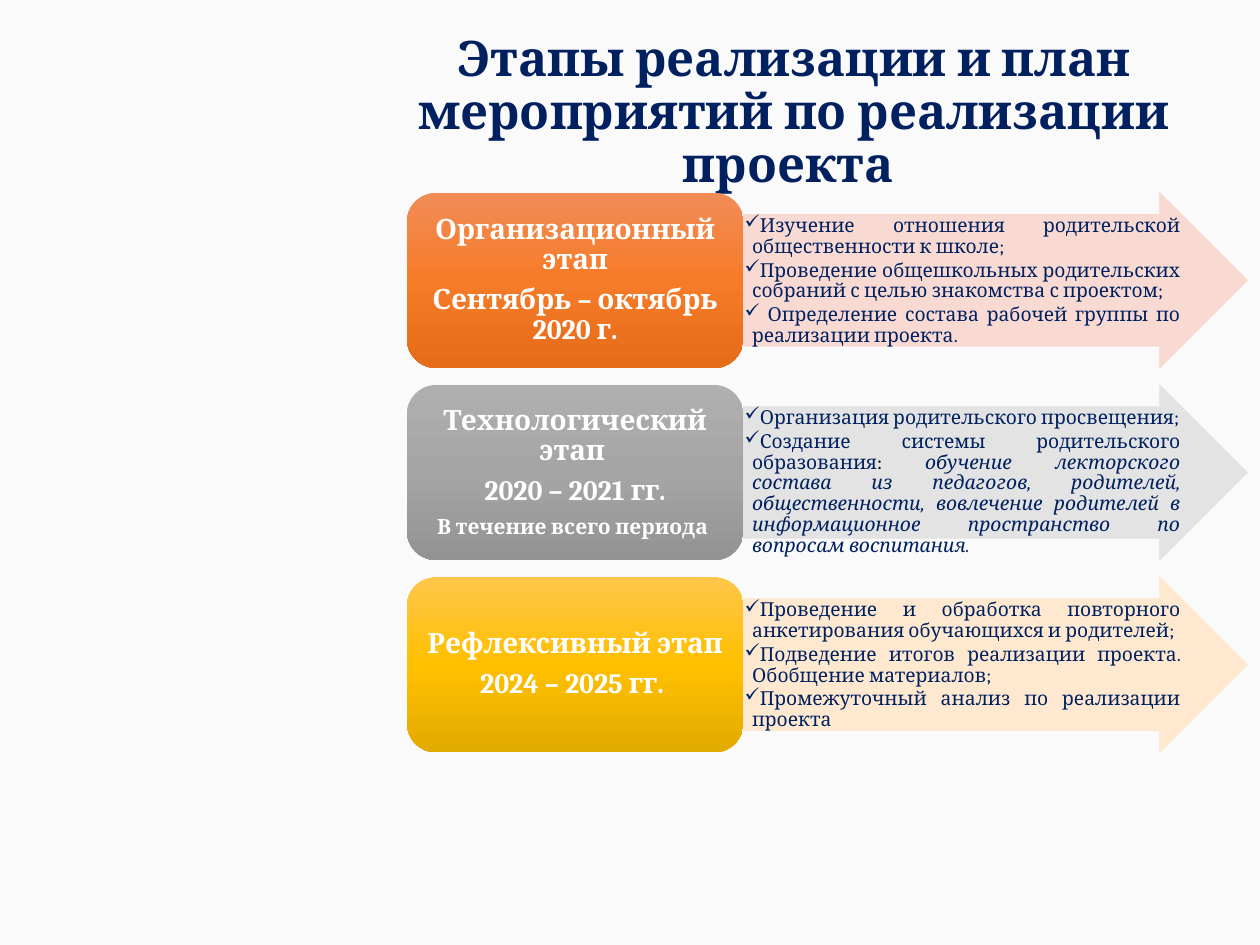
from lxml import etree
from copy import deepcopy
from pptx import Presentation
from pptx.dml.color import RGBColor
from pptx.enum.shapes import MSO_SHAPE
from pptx.enum.text import MSO_ANCHOR, PP_ALIGN
from pptx.oxml.ns import qn
from pptx.util import Inches, Pt

ROUNDED = MSO_SHAPE.ROUNDED_RECTANGLE
ARROW = MSO_SHAPE.RIGHT_ARROW
MIDDLE = MSO_ANCHOR.MIDDLE
TOP = MSO_ANCHOR.TOP
CENTER = PP_ALIGN.CENTER
JUSTIFY = PP_ALIGN.JUSTIFY

SERIF = "Cambria"
SANS = "Calibri"
NAVY = "002060"
WHITE = "FFFFFF"
BLACK = "000000"

LABEL_WIDTH = 2.67
ROW_HEIGHT = 1.39
ROW_STEP = 1.525

STAGES = [
    {
        "gradient": ["F18C57", "F67B28", "E56C19"],
        "tint": "F8D7CE",
        "label": [("Организационный этап", 16), ("Сентябрь – октябрь 2020 г.", 16)],
        "tasks": [
            [("Изучение отношения родительской общественности к школе;", {})],
            [("Проведение общешкольных родительских собраний с целью знакомства с проектом;", {})],
            [(" Определение состава рабочей группы по реализации проекта.", {})],
        ],
    },
    {
        "gradient": ["AFAFAF", "A5A5A5", "939393"],
        "tint": "E1E1E1",
        "label": [("Технологический этап ", 16), ("2020 – 2021 гг.", 16),
                  ("В течение всего периода ", 12)],
        "tasks": [
            [("Организация родительского просвещения;", {})],
            [("Создание системы родительского образования", {}),
             (": ", {"name": SANS, "color": BLACK}),
             ("обучение лекторского состава из педагогов, родителей, общественности, "
              "вовлечение родителей в информационное пространство по вопросам воспитания.",
              {"italic": True})],
        ],
    },
    {
        "gradient": ["FFC64B", "FFC000", "E3AB00"],
        "tint": "FFE8CC",
        "label": [("Рефлексивный этап", 16), ("2024 – 2025 гг. ", 16)],
        "tasks": [
            [("Проведение и обработка повторного анкетирования обучающихся и родителей;", {})],
            [("Подведение итогов реализации проекта. Обобщение материалов;", {})],
            [("Промежуточный анализ по реализации проекта", {})],
        ],
    },
]


def rgb(value):
    return RGBColor.from_string(value)


def prepare_frame(shape, anchor, horizontal, vertical):
    frame = shape.text_frame
    frame.word_wrap = True
    frame.vertical_anchor = anchor
    frame.margin_left = frame.margin_right = Inches(horizontal)
    frame.margin_top = frame.margin_bottom = Inches(vertical)
    return frame


def add_para(frame, index, align, space_after=0):
    para = frame.paragraphs[0] if index == 0 else frame.add_paragraph()
    para.alignment = align
    para.line_spacing = 0.9
    para.space_after = Pt(space_after)
    return para


def add_span(para, text, size, color=NAVY, name=SERIF, bold=False, italic=False):
    span = para.add_run()
    span.text = text
    span.font.size = Pt(size)
    span.font.name = name
    span.font.bold = bold
    span.font.italic = italic
    span.font.color.rgb = rgb(color)


def add_check_bullet(para):
    properties = para._p.get_or_add_pPr()
    properties.set("marL", str(Inches(0.06)))
    properties.set("indent", str(-Inches(0.06)))
    etree.SubElement(properties, qn("a:buChar")).set("char", "✓")


def set_gradient(shape, colors):
    shape.fill.gradient()
    shape.fill.gradient_angle = 270
    stop_list = next(shape._element.iter(qn("a:gsLst")))
    stop_list.append(deepcopy(stop_list[-1]))
    for index, (stop, color) in enumerate(zip(shape.fill.gradient_stops, colors)):
        stop.position = index / 2
        stop.color.rgb = rgb(color)


def add_title(page, left, top, width, height):
    box = page.shapes.add_textbox(Inches(left), Inches(top), Inches(width), Inches(height))
    frame = prepare_frame(box, MIDDLE, 0.1, 0.05)
    para = add_para(frame, 0, CENTER)
    add_span(para, "Этапы реализации и план мероприятий по реализации проекта ", 28, bold=True)


def add_tasks(page, stage, left, top, width, height):
    arrow = page.shapes.add_shape(ARROW, Inches(left), Inches(top), Inches(width), Inches(height))
    arrow.shadow.inherit = False
    arrow.adjustments[0] = 0.75
    arrow.adjustments[1] = 0.5
    arrow.fill.solid()
    arrow.fill.fore_color.rgb = rgb(stage["tint"])
    arrow.line.color.rgb = rgb(stage["tint"])
    arrow.line.width = Pt(0.5)
    for color in arrow._element.spPr.iter(qn("a:srgbClr")):
        etree.SubElement(color, qn("a:alpha")).set("val", "90000")

    box = page.shapes.add_textbox(Inches(left), Inches(top + height / 8),
                                  Inches(width - height * 3 / 8), Inches(height * 3 / 4))
    frame = prepare_frame(box, TOP, 0.01, 0.01)
    for index, task in enumerate(stage["tasks"]):
        para = add_para(frame, index, JUSTIFY, 1.65)
        add_check_bullet(para)
        for text, style in task:
            add_span(para, text, 11, **style)


def add_label(page, stage, left, top, width, height):
    label = page.shapes.add_shape(ROUNDED, Inches(left), Inches(top), Inches(width), Inches(height))
    label.shadow.inherit = False
    label.line.fill.background()
    set_gradient(label, stage["gradient"])
    frame = prepare_frame(label, MIDDLE, 0.07, 0.03)
    for index, (text, size) in enumerate(stage["label"]):
        para = add_para(frame, index, CENTER, size * 0.35)
        add_span(para, text, size, WHITE, bold=True)


def add_stages(page, left, top, width):
    for index, stage in enumerate(STAGES):
        row_top = top + index * ROW_STEP
        add_tasks(page, stage, left + LABEL_WIDTH, row_top, width - LABEL_WIDTH, ROW_HEIGHT)
        add_label(page, stage, left, row_top, LABEL_WIDTH, ROW_HEIGHT)


def main():
    deck = Presentation()
    deck.slide_width = Inches(10)
    deck.slide_height = Inches(7.5)
    page = deck.slides.add_slide(deck.slide_layouts[6])
    page.background.fill.solid()
    page.background.fill.fore_color.rgb = rgb("FAFAFA")
    add_title(page, 2.6, 0.29, 7.4, 1.23)
    add_stages(page, 3.23, 1.53, 6.67)
    deck.save("out.pptx")


if __name__ == "__main__":
    main()
